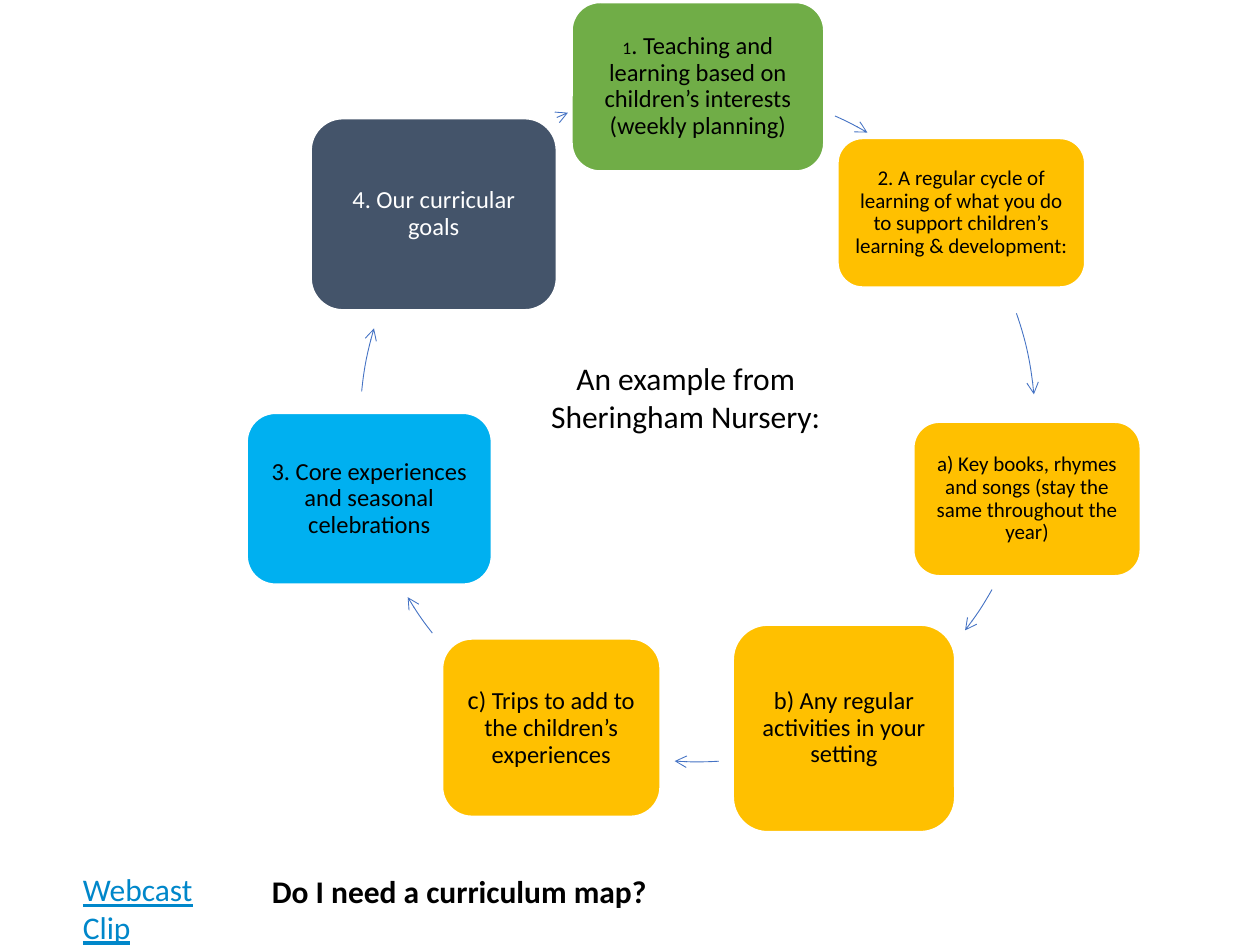
from lxml import etree
from pptx import Presentation
from pptx.dml.color import RGBColor
from pptx.enum.shapes import MSO_SHAPE
from pptx.enum.text import MSO_ANCHOR, PP_ALIGN
from pptx.oxml.ns import qn
from pptx.util import Cm, Pt

ROUND, ARC = MSO_SHAPE.ROUNDED_RECTANGLE, MSO_SHAPE.ARC
CENTER, LEFT = PP_ALIGN.CENTER, PP_ALIGN.LEFT
MIDDLE = MSO_ANCHOR.MIDDLE
GREEN, AMBER, SKY, SLATE = "70AD47", "FFC000", "00B0F0", "44546A"
BLUE, LINK, BLACK, WHITE = "4472C4", "0087CA", "000000", "FFFFFF"

STEPS = [
    ((11.53, 0.05, 5.08, 3.4), GREEN, BLACK, 0.1,
     [("1", 10), (". Teaching and learning based on children’s interests (weekly planning)", 14)]),
    ((16.89, 2.79, 4.98, 3), AMBER, BLACK, 0.12,
     [("2. A regular cycle of learning of what you do to support children’s "
       "learning & development:", 12)]),
    ((18.42, 8.51, 4.57, 3.1), AMBER, BLACK, 0.12,
     [("a) Key books, rhymes and songs (stay the same throughout the year)", 12)]),
    ((14.78, 12.6, 4.47, 4.17), AMBER, BLACK, 0.15,
     [("b) Any regular activities in your setting", 14)]),
    ((8.92, 12.88, 4.39, 3.58), AMBER, BLACK, 0.15,
     [("c", 15), (") Trips to add to the children’s experiences", 14)]),
    ((4.98, 8.33, 4.93, 3.45), SKY, BLACK, 0.15,
     [("3. Core experiences and seasonal celebrations", 14)]),
    ((6.27, 2.39, 4.95, 3.86), SLATE, WHITE, 0.15,
     [("4. Our curricular goals", 14)]),
]
CIRCLE = (7.26, 1.75, 13.61, 13.61)
ARROW_ANGLES = [(294, 300.2), (340.8, 354.9), (29.3, 37.6), (86.4, 93.9),
                (141.8, 149.2), (185.6, 196.5), (245.8, 247.4)]
LABELS = [
    ((1.42, 17.42, 3.6, 1.02), ["Webcast Clip"], LEFT, LINK, False, True),
    ((5.23, 17.45, 8.13, 1.02), ["Do I need a curriculum map?"], LEFT, BLACK, True, False),
    ((10.8, 7.11, 6.05, 1.8), ["An example from", "Sheringham Nursery:"],
     CENTER, BLACK, False, False),
]


def rgb(color):
    return RGBColor.from_string(color)


def style_run(r, size, color):
    r.font.name = "Calibri"
    r.font.size = Pt(size)
    r.font.color.rgb = rgb(color)


def add_step(s, box, fill, color, inset, runs):
    sp = s.shapes.add_shape(ROUND, *map(Cm, box))
    sp.shadow.inherit = False
    sp.fill.solid()
    sp.fill.fore_color.rgb = rgb(fill)
    sp.line.color.rgb = rgb(WHITE)
    sp.line.width = Pt(1)
    tf = sp.text_frame
    tf.word_wrap = True
    tf.vertical_anchor = MIDDLE
    tf.margin_left = tf.margin_right = tf.margin_top = tf.margin_bottom = Cm(inset)
    p = tf.paragraphs[0]
    p.alignment = CENTER
    p.line_spacing = 0.9
    for text, size in runs:
        r = p.add_run()
        r.text = text
        style_run(r, size, color)


def add_arrow(s, start, end):
    sp = s.shapes.add_shape(ARC, *map(Cm, CIRCLE))
    sp.shadow.inherit = False
    sp.fill.background()
    for i, angle in enumerate((start, end)):
        sp.adjustments[i] = angle * 0.6
    sp.line.color.rgb = rgb(BLUE)
    sp.line.width = Pt(0.5)
    etree.SubElement(sp.line._get_or_add_ln(), qn("a:tailEnd"), type="arrow")


def add_label(s, box, lines, align, color, bold, underline):
    tf = s.shapes.add_textbox(*map(Cm, box)).text_frame
    tf.word_wrap = False
    tf.text = "\n".join(lines)
    for p in tf.paragraphs:
        p.alignment = align
        for r in p.runs:
            style_run(r, 18, color)
            r.font.bold = bold
            r.font.underline = underline


prs = Presentation()
prs.slide_width, prs.slide_height = Cm(25.4), Cm(19.05)
s = prs.slides.add_slide(prs.slide_layouts[6])
for step, angles in zip(STEPS, ARROW_ANGLES):
    add_step(s, *step)
    add_arrow(s, *angles)
for label in LABELS:
    add_label(s, *label)
prs.save("out.pptx")
